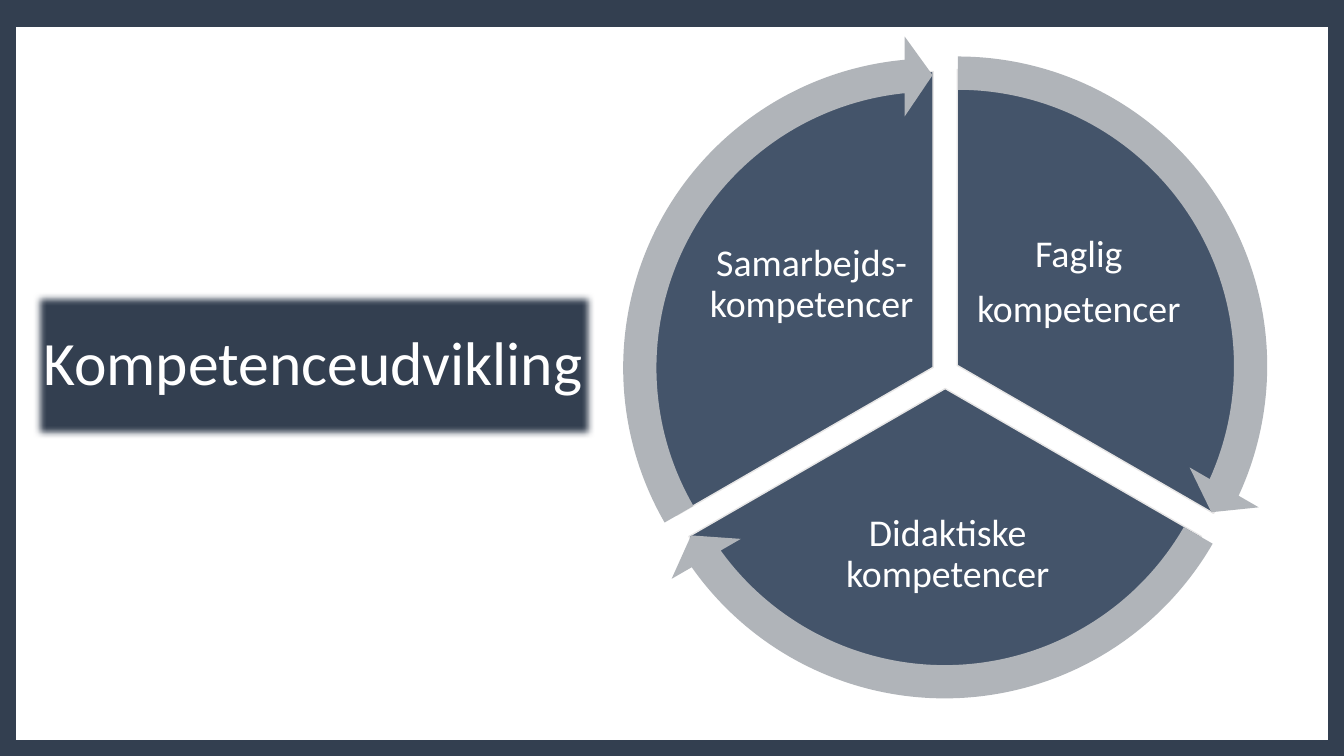
from dataclasses import dataclass

from lxml import etree
from pptx import Presentation
from pptx.dml.color import RGBColor
from pptx.enum.shapes import MSO_SHAPE as Shp
from pptx.enum.text import MSO_ANCHOR as Anchor, MSO_AUTO_SIZE as AutoSize, PP_ALIGN as Align
from pptx.oxml.ns import qn
from pptx.shapes.autoshape import Shape
from pptx.shapes.shapetree import GroupShapes
from pptx.text.text import TextFrame
from pptx.util import Inches, Pt

NAVY = RGBColor(0x33, 0x3F, 0x50)
SLATE = RGBColor(0x44, 0x54, 0x6A)
PALE = RGBColor(0xE7, 0xE6, 0xE6)
GREY = RGBColor(0xB0, 0xB4, 0xB9)
WHITE = RGBColor(0xFF, 0xFF, 0xFF)
FONT = "Calibri"

PIE_SIZE = 5.87
ARROW_SIZE = 6.6
DEGREE = 0.6  # adjustment units per degree
HEAD_ANGLE = 3.28
ARROW_WIDTH = 0.05
HEAD_WIDTH = 0.06


@dataclass
class Segment:
    lines: list[str]
    start: int  # degrees, clockwise from the right
    end: int
    pie: tuple[float, float]
    arrow: tuple[float, float]
    label: tuple[float, float, float, float]


SEGMENTS = [
    Segment(["Faglig", "kompetencer"], 270, 30,
            (6.56, 0.69), (6.2, 0.33), (9.65, 1.93, 2.1, 1.75)),
    Segment(["Didaktiske kompetencer"], 30, 150,
            (6.44, 0.92), (6.07, 0.56), (7.83, 4.73, 3.14, 1.54)),
    Segment(["Samarbejds-kompetencer"], 150, 270,
            (6.32, 0.71), (5.95, 0.35), (7, 1.95, 2.1, 1.75)),
]


def write_lines(tf: TextFrame, lines: list[str], size: float,
                align: Align, after: float = 0) -> None:
    tf.word_wrap = True
    tf.auto_size = AutoSize.NONE
    tf.vertical_anchor = Anchor.MIDDLE
    for i, line in enumerate(lines):
        p = tf.paragraphs[0] if i == 0 else tf.add_paragraph()
        p.alignment = align
        p.line_spacing = 0.9
        p.space_before = Pt(0)
        p.space_after = Pt(after)
        r = p.add_run()
        r.text = line
        r.font.name = FONT
        r.font.size = Pt(size)
        r.font.color.rgb = WHITE


def add_round(shapes: GroupShapes, kind: Shp, corner: tuple[float, float], size: float,
              color: RGBColor, adjustments: list[float]) -> Shape:
    sp = shapes.add_shape(kind, *map(Inches, (*corner, size, size)))
    sp.shadow.inherit = False
    sp.fill.solid()
    sp.fill.fore_color.rgb = color
    sp.line.fill.background()
    for i, value in enumerate(adjustments):
        sp.adjustments[i] = value
    return sp


def add_pie(shapes: GroupShapes, seg: Segment) -> None:
    sp = add_round(shapes, Shp.PIE, seg.pie, PIE_SIZE, SLATE,
                   [seg.start * DEGREE, seg.end * DEGREE])
    sp.line.color.rgb = PALE
    sp.line.width = Pt(1)


def add_label(shapes: GroupShapes, seg: Segment) -> None:
    tf = shapes.add_textbox(*map(Inches, seg.label)).text_frame
    tf.margin_left = tf.margin_right = tf.margin_top = tf.margin_bottom = Inches(0.04)
    write_lines(tf, seg.lines, 27, Align.CENTER, after=9.45)


def add_arrow(shapes: GroupShapes, seg: Segment) -> None:
    add_round(shapes, Shp.CIRCULAR_ARROW, seg.arrow, ARROW_SIZE, GREY,
              [ARROW_WIDTH, HEAD_ANGLE, seg.end * DEGREE - HEAD_ANGLE,
               seg.start * DEGREE, HEAD_WIDTH])


def main() -> None:
    prs = Presentation()
    prs.slide_width, prs.slide_height = Inches(13.33), Inches(7.5)
    s = prs.slides.add_slide(prs.slide_layouts[5])

    # Frame around the slide
    frame = s.shapes.add_shape(Shp.RECTANGLE, *map(Inches, (0, 0.11, 13.33, 7.39)))
    frame.shadow.inherit = False
    frame.fill.background()
    frame.line.color.rgb = NAVY
    frame.line.width = Pt(23.25)

    # Title with soft edges
    title = s.shapes.title
    title.left, title.top, title.width, title.height = map(Inches, (0.33, 2.9, 5.57, 1.45))
    title.fill.solid()
    title.fill.fore_color.rgb = NAVY
    effects = etree.SubElement(title.element.spPr, qn("a:effectLst"))
    etree.SubElement(effects, qn("a:softEdge"), rad=str(Inches(0.07)))
    write_lines(title.text_frame, ["Kompetenceudvikling"], 44, Align.LEFT)

    # Cycle: labelled pies with arrows on top
    cycle = s.shapes.add_group_shape().shapes
    for seg in SEGMENTS:
        add_pie(cycle, seg)
        add_label(cycle, seg)
    for seg in SEGMENTS:
        add_arrow(cycle, seg)

    prs.save("out.pptx")


if __name__ == "__main__":
    main()
